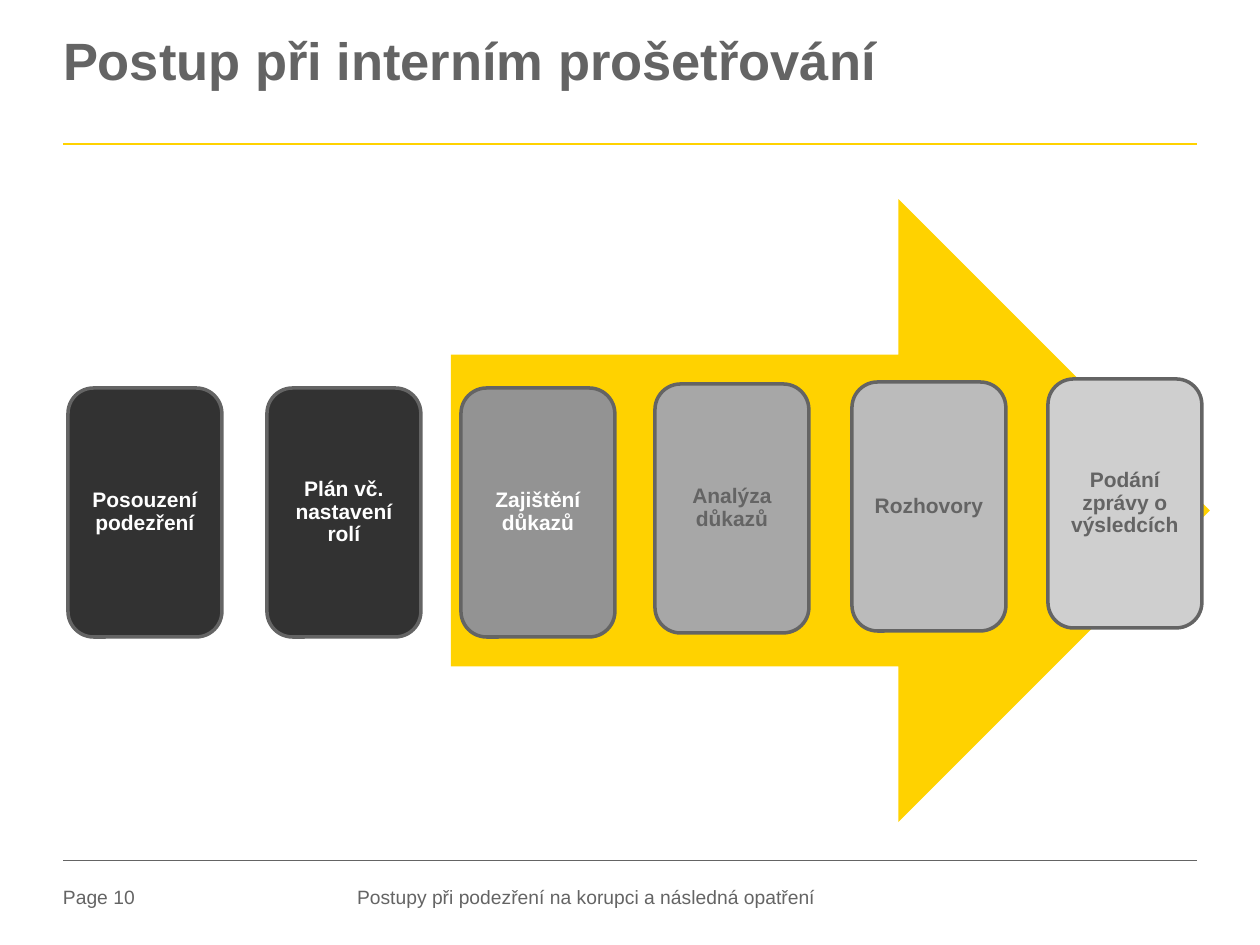
"""Build the slide on the steps of an internal investigation."""
from lxml import etree
from pptx import Presentation
from pptx import util as u
from pptx.dml.color import RGBColor
from pptx.enum import shapes, text
from pptx.oxml import ns

EMU_PER_PX = 914400 / 126
COLORS = {
    "yellow": "FFD200", "gray": "646464", "white": "FFFFFF", "dark": "323232",
    "step3": "939393", "step4": "A7A7A7", "step5": "BBBBBB", "step6": "CFCFCF",
}
STEP_WIDTH, STEP_HEIGHT = 154, 249
STEPS = [
    ("Posouzení podezření", 68, 388, "dark", "white"),
    ("Plán vč. nastavení rolí", 267, 388, "dark", "white"),
    ("Zajištění důkazů", 461, 388, "step3", "white"),
    ("Analýza důkazů", 655, 384, "step4", "gray"),
    ("Rozhovory", 852, 382, "step5", "gray"),
    ("Podání zprávy o výsledcích", 1048, 379, "step6", "gray"),
]
RULES = [(144, "yellow", 1.5), (860, "gray", 0.25)]
FOOTERS = [("Page 10", 63, 100), ("Postupy při podezření na korupci a následná opatření", 357, 474)]


def px(*lengths):
    """Turn pixel lengths into EMU."""
    return [u.Emu(round(length * EMU_PER_PX)) for length in lengths]


def color(name):
    """Return the named colour."""
    return RGBColor.from_string(COLORS[name])


def apply(target, values):
    """Set each named attribute on the target."""
    for name, value in values.items():
        setattr(target, name, value)


def write(shape, wording, size, ink="gray", bold=False, inset=0, spacing=1.0,
          align=text.PP_ALIGN.LEFT, anchor=text.MSO_ANCHOR.TOP):
    """Fill a shape with one formatted paragraph."""
    frame = shape.text_frame
    margins = {f"margin_{side}": u.Inches(inset) for side in ("left", "top", "right", "bottom")}
    apply(frame, {**margins, "word_wrap": True, "vertical_anchor": anchor,
                  "auto_size": text.MSO_AUTO_SIZE.NONE})
    para = frame.paragraphs[0]
    apply(para, {"alignment": align, "line_spacing": spacing})
    span = para.add_run()
    span.text = wording
    apply(span.font, {"name": "Arial", "size": u.Pt(size), "bold": bold})
    span.font.color.rgb = color(ink)


def add_title(page, wording):
    """Place and format the title."""
    title = page.shapes.title
    apply(title, dict(zip(("left", "top", "width", "height"), px(63, 38, 1134, 118))))
    write(title, wording, 30, bold=True, spacing=0.85)


def add_rule(page, top, ink, weight):
    """Draw a horizontal rule between the page margins."""
    rule = page.shapes.add_connector(shapes.MSO_CONNECTOR.STRAIGHT, *px(63, top, 1197, top))
    rule.line.color.rgb = color(ink)
    rule.line.width = u.Pt(weight)
    etree.SubElement(rule._element.spPr, ns.qn("a:effectLst"))


def add_footer(page, wording, left, width):
    """Add a footer text."""
    write(page.shapes.add_textbox(*px(left, 885, width, 28)), wording, 11)


def add_block(page, kind, area, fill):
    """Add a filled shape without outline or shadow."""
    block = page.shapes.add_shape(kind, *px(*area))
    block.shadow.inherit = False
    block.fill.solid()
    block.fill.fore_color.rgb = color(fill)
    block.line.fill.background()
    return block


def add_step(page, wording, left, top, fill, ink):
    """Add one rounded process step."""
    step = add_block(page, shapes.MSO_SHAPE.ROUNDED_RECTANGLE,
                     (left, top, STEP_WIDTH, STEP_HEIGHT), fill)
    step.line.color.rgb = color("gray")
    step.line.width = u.Pt(2)
    write(step, wording, 12, ink, bold=True, inset=0.05, spacing=0.9,
          align=text.PP_ALIGN.CENTER, anchor=text.MSO_ANCHOR.MIDDLE)


def main():
    """Build and save the deck."""
    deck = Presentation()
    apply(deck, {"slide_width": u.Inches(10), "slide_height": u.Inches(7.5)})
    page = deck.slides.add_slide(deck.slide_layouts.get_by_name("Title Only"))
    for rule in RULES:
        add_rule(page, *rule)
    add_title(page, "Postup při interním prošetřování")
    for footer in FOOTERS:
        add_footer(page, *footer)
    add_block(page, shapes.MSO_SHAPE.RIGHT_ARROW, (451, 199, 759, 623), "yellow")
    for step in STEPS:
        add_step(page, *step)
    deck.save("out.pptx")


if __name__ == "__main__":
    main()
